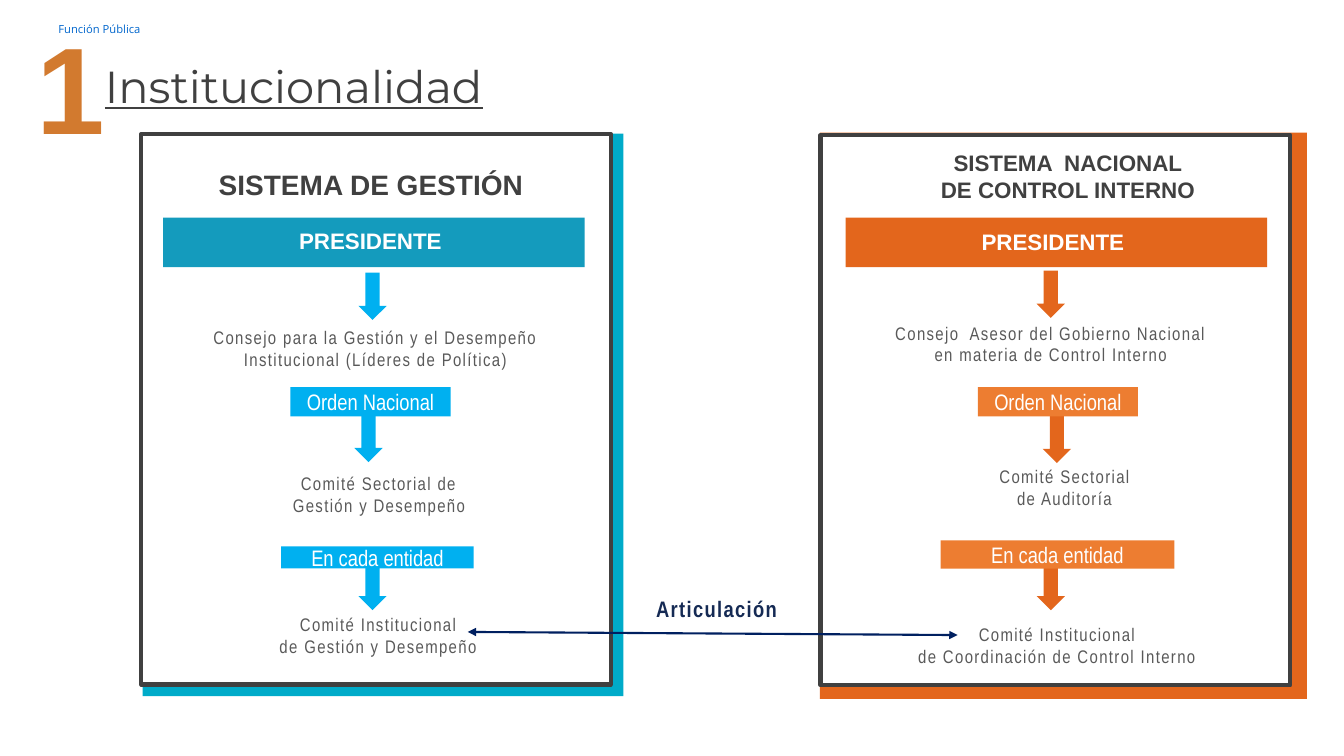
from dataclasses import dataclass
from typing import NamedTuple

from lxml import etree
from pptx import Presentation
from pptx.dml.color import RGBColor
from pptx.enum import shapes, text
from pptx.oxml.ns import qn
from pptx.util import Pt

WHITE = RGBColor(0xFF, 0xFF, 0xFF)
DARK_GRAY = RGBColor(0x40, 0x40, 0x40)
GRAY = RGBColor(0x59, 0x59, 0x59)
TEAL = RGBColor(0x00, 0xAB, 0xC9)
DEEP_TEAL = RGBColor(0x14, 0x9B, 0xBD)
SKY = RGBColor(0x00, 0xB0, 0xF0)
ORANGE = RGBColor(0xE3, 0x66, 0x1C)
LIGHT_ORANGE = RGBColor(0xED, 0x7D, 0x31)
OCHRE = RGBColor(0xD2, 0x7A, 0x2F)
BLUE = RGBColor(0x00, 0x66, 0xCD)
NAVY = RGBColor(0x00, 0x20, 0x60)
INK = RGBColor(0x15, 0x2A, 0x54)

RECTANGLE = shapes.MSO_SHAPE.RECTANGLE
DOWN_ARROW = shapes.MSO_SHAPE.DOWN_ARROW
TOP = text.MSO_ANCHOR.TOP
MIDDLE = text.MSO_ANCHOR.MIDDLE
LEFT = text.PP_ALIGN.LEFT
CENTER = text.PP_ALIGN.CENTER
NARROW_INSETS = (7.2, 3.6)
WIDE_INSETS = (9.36, 5.04)


class Box(NamedTuple):
    left: float
    top: float
    width: float
    height: float

    def lengths(self) -> list:
        return [Pt(value) for value in self]


class Style(NamedTuple):
    font: str
    size: float
    color: RGBColor
    bold: bool = False
    underline: bool = False
    spacing: int = 0
    align: text.PP_ALIGN = CENTER
    anchor: text.MSO_ANCHOR = MIDDLE
    insets: tuple = NARROW_INSETS
    wrap: bool = True


class Label(NamedTuple):
    box: Box
    wording: str


@dataclass
class System:
    shadow: Box
    frame: Box
    shadow_color: RGBColor
    banner: Box
    banner_color: RGBColor
    heading: Label
    heading_size: float
    president: Box
    arrows: list[tuple[float, float]]
    arrow_color: RGBColor
    captions: list[Label]
    bands: list[Label]
    band_color: RGBColor


HEADER = Style("Open Sans", 8, BLUE, align=LEFT)
TITLE = Style("Montserrat", 32, DARK_GRAY, underline=True, align=LEFT, anchor=TOP, insets=WIDE_INSETS)
NUMBER = Style("Arial", 88, OCHRE, bold=True, spacing=100, align=LEFT, insets=WIDE_INSETS)
HEADING = Style("Arial", 20, DARK_GRAY, bold=True, anchor=TOP, wrap=False)
PRESIDENT = Style("Arial", 16, WHITE, bold=True, anchor=TOP, wrap=False)
CAPTION = Style("Arial Narrow", 13, GRAY, spacing=100)
BAND = Style("Arial Narrow", 16, WHITE, insets=WIDE_INSETS)
LINK = Style("Arial Narrow", 16, INK, bold=True, spacing=100)

SYSTEMS = [
    System(
        shadow=Box(101.9, 95.4, 343.4, 401.8),
        frame=Box(100.8, 95.8, 335.5, 393.1),
        shadow_color=TEAL,
        banner=Box(116.6, 155.5, 301, 35.3),
        banner_color=DEEP_TEAL,
        heading=Label(Box(147.6, 115.9, 234.7, 31.7), "SISTEMA DE GESTIÓN"),
        heading_size=20,
        president=Box(205.9, 158.4, 117.4, 26.6),
        arrows=[(256, 194.8), (253.1, 296.3), (256, 402.1)],
        arrow_color=SKY,
        captions=[
            Label(Box(112.3, 229, 311.8, 38.9),
                  "Consejo para la Gestión y el Desempeño Institucional (Líderes de Política)"),
            Label(Box(185, 333.4, 171.4, 38.9), "Comité Sectorial de Gestión y Desempeño"),
            Label(Box(171.4, 434.2, 197.3, 38.9), "Comité Institucional\nde Gestión y Desempeño"),
        ],
        bands=[
            Label(Box(207.4, 276.5, 114.5, 20.9), "Orden Nacional"),
            Label(Box(200.9, 390.2, 137.5, 15.8), "En cada entidad"),
        ],
        band_color=SKY,
    ),
    System(
        shadow=Box(585.7, 94.7, 347.8, 404.6),
        frame=Box(586.1, 96.5, 335.5, 393.1),
        shadow_color=ORANGE,
        banner=Box(604.1, 155.5, 301, 35.3),
        banner_color=ORANGE,
        heading=Label(Box(663.8, 103, 198, 46.1), "SISTEMA  NACIONAL\nDE CONTROL INTERNO"),
        heading_size=16,
        president=Box(693.4, 159.1, 117.4, 26.6),
        arrows=[(740.5, 193.3), (744.8, 297), (740.5, 402.1)],
        arrow_color=ORANGE,
        captions=[
            Label(Box(625.7, 226.1, 249.8, 38.9),
                  "Consejo  Asesor del Gobierno Nacional en materia de Control Interno"),
            Label(Box(679.7, 328.3, 161.3, 38.9), "Comité Sectorial\nde Auditoría"),
            Label(Box(643.7, 441.4, 222.5, 38.9),
                  "Comité Institucional\nde Coordinación de Control Interno"),
        ],
        bands=[
            Label(Box(698.4, 276.5, 114.5, 20.9), "Orden Nacional"),
            Label(Box(671.8, 385.9, 167, 20.2), "En cada entidad"),
        ],
        band_color=LIGHT_ORANGE,
    ),
]


def write(shape, wording: str, style: Style) -> None:
    frame = shape.text_frame
    frame.word_wrap = style.wrap
    frame.vertical_anchor = style.anchor
    frame.margin_left = frame.margin_right = Pt(style.insets[0])
    frame.margin_top = frame.margin_bottom = Pt(style.insets[1])
    frame.text = wording
    for paragraph in frame.paragraphs:
        paragraph.alignment = style.align
        font = paragraph.font
        font.name = style.font
        font.size = Pt(style.size)
        font.bold = style.bold
        font.underline = style.underline
        font.color.rgb = style.color
        if style.spacing:
            for run in paragraph.runs:
                run.font._element.set("spc", str(style.spacing))


def add_text(slide, label: Label, style: Style) -> None:
    write(slide.shapes.add_textbox(*label.box.lengths()), label.wording, style)


def add_solid(slide, kind: shapes.MSO_SHAPE, box: Box, color: RGBColor):
    shape = slide.shapes.add_shape(kind, *box.lengths())
    shape.shadow.inherit = False
    shape.fill.solid()
    shape.fill.fore_color.rgb = color
    shape.line.fill.background()
    return shape


def add_system(slide, system: System) -> None:
    add_solid(slide, RECTANGLE, system.shadow, system.shadow_color)
    panel = add_solid(slide, RECTANGLE, system.frame, WHITE)
    panel.line.color.rgb = DARK_GRAY
    panel.line.width = Pt(3)
    for caption in system.captions:
        add_text(slide, caption, CAPTION)
    add_text(slide, system.heading, HEADING._replace(size=system.heading_size))
    add_solid(slide, RECTANGLE, system.banner, system.banner_color)
    add_text(slide, Label(system.president, "PRESIDENTE"), PRESIDENT)
    for left, top in system.arrows:
        add_solid(slide, DOWN_ARROW, Box(left, top, 20.2, 33.8), system.arrow_color)
    for band in system.bands:
        write(add_solid(slide, RECTANGLE, band.box, system.band_color), band.wording, BAND)


def add_double_arrow(slide, begin: tuple[float, float], end: tuple[float, float]) -> None:
    connector = slide.shapes.add_connector(
        shapes.MSO_CONNECTOR.STRAIGHT, *[Pt(value) for value in begin + end])
    connector.line.color.rgb = NAVY
    connector.line.width = Pt(1.5)
    outline = connector.line._get_or_add_ln()
    for tag in ("a:headEnd", "a:tailEnd"):
        etree.SubElement(outline, qn(tag), type="triangle")
    etree.SubElement(connector._element.spPr, qn("a:effectLst"))


def main() -> None:
    presentation = Presentation()
    presentation.slide_width, presentation.slide_height = Pt(960), Pt(540)
    slide = presentation.slides.add_slide(presentation.slide_layouts[6])
    add_text(slide, Label(Box(34.6, 11.5, 194.4, 18.7), "Función Pública"), HEADER)
    add_text(slide, Label(Box(65.5, 36.7, 316.1, 48.2), "Institucionalidad"), TITLE)
    for system in SYSTEMS:
        add_system(slide, system)
    add_text(slide, Label(Box(16.6, 2.9, 57.6, 116.6), "1"), NUMBER)
    add_double_arrow(slide, (334.1, 451.4), (684, 453.6))
    add_text(slide, Label(Box(426.2, 421.2, 171.4, 26.6), "Articulación"), LINK)
    presentation.save("out.pptx")


if __name__ == "__main__":
    main()
